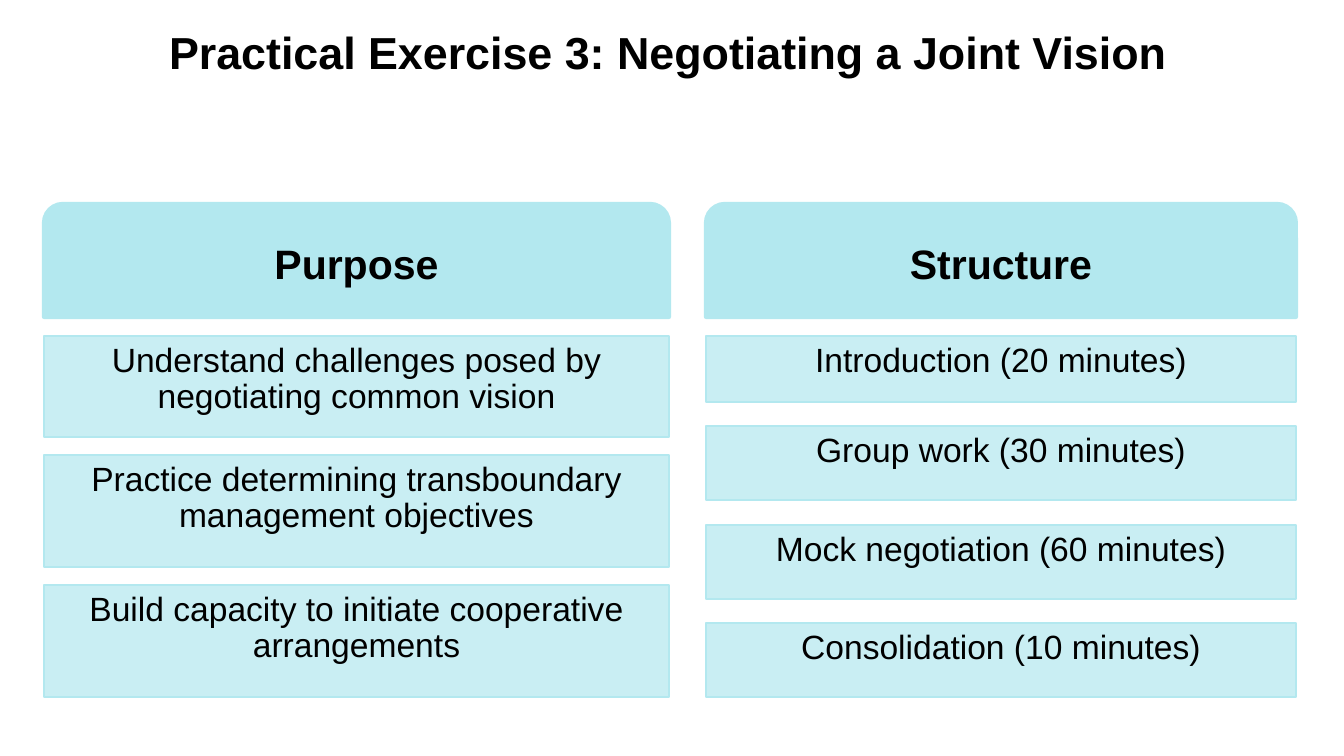
from dataclasses import dataclass

from lxml import etree
from pptx import Presentation
from pptx.dml.color import RGBColor
from pptx.enum.shapes import MSO_SHAPE
from pptx.enum.text import MSO_ANCHOR, MSO_AUTO_SIZE, PP_ALIGN
from pptx.oxml.ns import qn
from pptx.shapes.autoshape import Shape
from pptx.slide import Slide
from pptx.util import Emu, Pt

RECTANGLE = MSO_SHAPE.RECTANGLE
ROUND_TOP = MSO_SHAPE.ROUND_2_SAME_RECTANGLE
TOP, MIDDLE = MSO_ANCHOR.TOP, MSO_ANCHOR.MIDDLE
LEFT, CENTER = PP_ALIGN.LEFT, PP_ALIGN.CENTER
GROW = MSO_AUTO_SIZE.SHAPE_TO_FIT_TEXT

AQUA = RGBColor(0xB3, 0xE8, 0xEF)
BLACK = RGBColor(0x00, 0x00, 0x00)
WHITE = RGBColor(0xFF, 0xFF, 0xFF)
FONT = "Arial"

SLIDE_WIDTH, SLIDE_HEIGHT = 1344, 756
EMU_PER_PX = 9144000 / SLIDE_WIDTH
HEADER_TOP, HEADER_HEIGHT = 204, 113
ITEMS_TOP, ITEMS_BOTTOM = 336, 697
INSET, SMALL_INSET = 13, 7


@dataclass(frozen=True)
class Item:
    text: str
    height: int


@dataclass(frozen=True)
class Column:
    heading: str
    left: int
    width: int
    items: tuple[Item, ...]


COLUMNS = (
    Column("Purpose", 44, 625, (
        Item("Understand challenges posed by negotiating common vision", 101),
        Item("Practice determining transboundary management objectives", 112),
        Item("Build capacity to initiate cooperative arrangements", 112),
    )),
    Column("Structure", 706, 590, (
        Item("Introduction (20 minutes)", 66),
        Item("Group work (30 minutes)", 74),
        Item("Mock negotiation (60 minutes)", 74),
        Item("Consolidation (10 minutes)", 74),
    )),
)


def px(length: int) -> Emu:
    return Emu(round(length * EMU_PER_PX))


def set_fill(shape: Shape, color: RGBColor, opacity: int = 100) -> None:
    """Fill the shape; opacity is a percentage."""
    shape.fill.solid()
    shape.fill.fore_color.rgb = color
    if opacity < 100:
        color_element = shape.element.spPr.find(qn("a:solidFill"))[0]
        etree.SubElement(color_element, qn("a:alpha"), val=str(opacity * 1000))


def set_text(shape: Shape, text: str, size: int, bold: bool,
             alignment: PP_ALIGN, anchor: MSO_ANCHOR, inset_y: int,
             line_spacing: float = 1.0) -> None:
    frame = shape.text_frame
    frame.text = text
    frame.word_wrap = True
    frame.vertical_anchor = anchor
    frame.margin_left = frame.margin_right = px(INSET)
    frame.margin_top = frame.margin_bottom = px(inset_y)
    paragraph = frame.paragraphs[0]
    paragraph.alignment = alignment
    paragraph.line_spacing = line_spacing
    font = paragraph.runs[0].font
    font.name, font.size, font.bold = FONT, Pt(size), bold
    font.color.rgb = BLACK


def add_box(slide: Slide, kind: MSO_SHAPE, left: int, top: int, width: int,
            height: int, line_width: float, opacity: int = 100) -> Shape:
    shape = slide.shapes.add_shape(kind, px(left), px(top), px(width), px(height))
    shape.shadow.inherit = False
    set_fill(shape, AQUA, opacity)
    shape.line.color.rgb = AQUA
    shape.line.width = Pt(line_width)
    return shape


def add_column(slide: Slide, column: Column) -> None:
    """Draw the heading, then its items with equal gaps down to the bottom."""
    header = add_box(slide, ROUND_TOP, column.left, HEADER_TOP, column.width,
                     HEADER_HEIGHT, 2.25)
    set_text(header, column.heading, 22, True, CENTER, MIDDLE, INSET)

    free = ITEMS_BOTTOM - ITEMS_TOP - sum(item.height for item in column.items)
    gap = free / (len(column.items) - 1)
    top = ITEMS_TOP
    for item in column.items:
        box = add_box(slide, RECTANGLE, column.left, round(top), column.width,
                      item.height, 0.75, opacity=70)
        set_text(box, item.text, 18, False, CENTER, TOP, SMALL_INSET, 0.9)
        top += item.height + gap


def place_title(slide: Slide, text: str) -> None:
    title = slide.shapes.title
    title.left, title.top, title.width, title.height = map(px, (156, 18, 1188, 67))
    set_fill(title, WHITE, opacity=55)
    set_text(title, text, 24, True, LEFT, MIDDLE, SMALL_INSET)
    title.text_frame.auto_size = GROW


def main() -> None:
    presentation = Presentation()
    presentation.slide_width = px(SLIDE_WIDTH)
    presentation.slide_height = px(SLIDE_HEIGHT)
    slide = presentation.slides.add_slide(presentation.slide_layouts[5])
    place_title(slide, "Practical Exercise 3: Negotiating a Joint Vision")
    for column in COLUMNS:
        add_column(slide, column)
    presentation.save("out.pptx")


if __name__ == "__main__":
    main()
